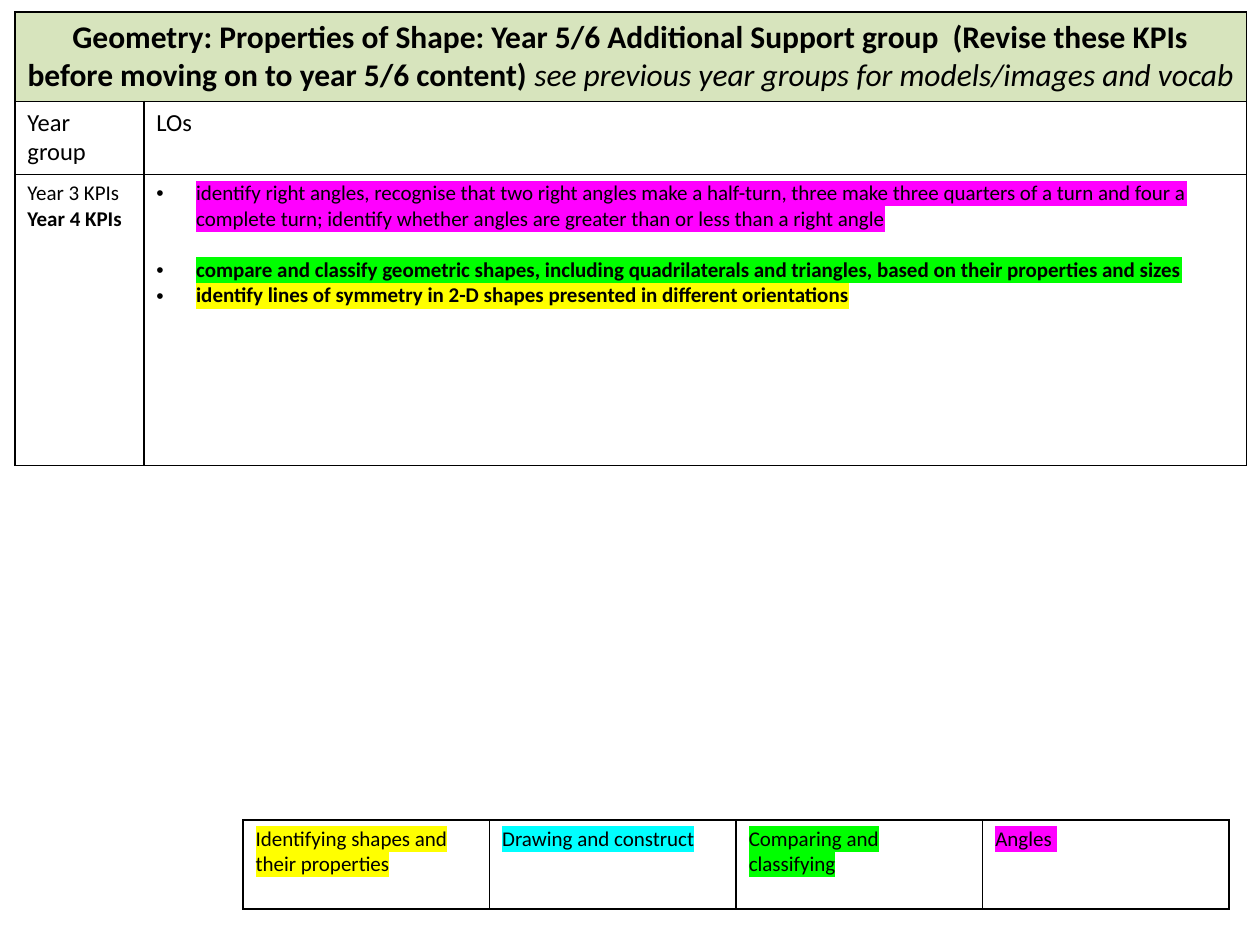
from lxml.etree import SubElement
from pptx import Presentation
from pptx.dml.color import RGBColor
from pptx.enum.text import PP_ALIGN
from pptx.oxml.ns import qn
from pptx.util import Cm, Pt

BLACK, YELLOW, GREEN, CYAN, PINK = "000000", "FFFF00", "00FF00", "00FFFF", "FF00FF"
TITLE_FILL = "D7E4BD"

# A paragraph is a dict: text (or runs of text and style), then its look.
TITLE = {"runs": [
    ("Geometry: Properties of Shape: Year 5/6 Additional Support group  "
     "(Revise these KPIs before moving on to year 5/6 content) ", "bold"),
    ("see previous year groups for models/images and vocab ", "italic"),
], "size": 18, "align": PP_ALIGN.CENTER}
HEADINGS = [{"text": "Year group", "size": 14}, {"text": "LOs", "size": 14}]
YEARS = [{"text": "Year 3 KPIs"}, {"text": "Year 4 KPIs", "bold": True}]
OBJECTIVES = [
    {"text": "identify right angles, recognise that two right angles make a half-turn, "
             "three make three quarters of a turn and four a complete turn; identify "
             "whether angles are greater than or less than a right angle",
     "highlight": PINK, "bullet": True},
    {"text": "compare and classify geometric shapes, including quadrilaterals and "
             "triangles, based on their properties and sizes",
     "highlight": GREEN, "bullet": True, "bold": True, "before": 14.6},
    {"text": "identify lines of symmetry in 2-D shapes presented in different orientations",
     "highlight": YELLOW, "bullet": True, "bold": True},
]
KEY = [
    ("Identifying shapes and their properties", YELLOW),
    ("Drawing and construct", CYAN),
    ("Comparing and classifying", GREEN),
    ("Angles ", PINK),
]

PLAN_ROWS = [[[TITLE], []], [[heading] for heading in HEADINGS], [YEARS, OBJECTIVES]]
KEY_ROWS = [[[{"text": text, "highlight": color}] for text, color in KEY]]


def rgb(color):
    return RGBColor.from_string(color)


def add_borders(cell):
    properties = cell._tc.get_or_add_tcPr()
    for side in ("lnL", "lnR", "lnT", "lnB"):
        line = SubElement(properties, qn(f"a:{side}"), w=str(Pt(1)))
        fill = SubElement(line, qn("a:solidFill"))
        SubElement(fill, qn("a:srgbClr"), val=BLACK)


def add_bullet(para):
    properties = para._p.get_or_add_pPr()
    properties.set("marL", str(Cm(0.8)))
    properties.set("indent", str(-Cm(0.8)))
    SubElement(properties, qn("a:buFont"), typeface="Arial")
    SubElement(properties, qn("a:buChar"), char="•")


def write_paragraph(para, content):
    if "before" in content:
        para.space_before = Pt(content["before"])
    if "align" in content:
        para.alignment = content["align"]
    if content.get("bullet"):
        add_bullet(para)
    font = para.font
    font.name, font.size = "Calibri", Pt(content.get("size", 12))
    font.color.rgb = rgb(BLACK)
    if "runs" not in content:
        font.bold = content.get("bold", False)
    for text, style in content.get("runs") or [(content["text"], None)]:
        span = para.add_run()
        span.text = text
        if style:
            span.font.bold = style == "bold"
            span.font.italic = style == "italic"
        if "highlight" in content:
            highlight = SubElement(span._r.get_or_add_rPr(), qn("a:highlight"))
            SubElement(highlight, qn("a:srgbClr"), val=content["highlight"])


def add_grid(page, left, top, widths, heights, rows):
    """Add a plain bordered table; lengths are in centimetres."""
    table = page.shapes.add_table(
        len(heights), len(widths), Cm(left), Cm(top),
        Cm(sum(widths)), Cm(sum(heights))).table
    table.first_row = table.horz_banding = False
    for column, width in zip(table.columns, widths):
        column.width = Cm(width)
    for row, height, contents in zip(table.rows, heights, rows):
        row.height = Cm(height)
        for cell, paragraphs in zip(row.cells, contents):
            add_borders(cell)
            cell.fill.background()
            frame = cell.text_frame
            for index, content in enumerate(paragraphs):
                para = frame.add_paragraph() if index else frame.paragraphs[0]
                write_paragraph(para, content)
    return table


deck = Presentation()
deck.slide_width, deck.slide_height = Cm(25.4), Cm(19.05)
page = deck.slides.add_slide(deck.slide_layouts[6])

plan = add_grid(page, 0.3, 0.24, [2.6, 22.23], [1.79, 1.47, 5.87], PLAN_ROWS)
title_cell = plan.cell(0, 0)
title_cell.merge(plan.cell(0, 1))
title_cell.fill.solid()
title_cell.fill.fore_color.rgb = rgb(TITLE_FILL)

add_grid(page, 4.9, 16.53, [4.97] * len(KEY), [1.79], KEY_ROWS)

deck.save("out.pptx")
